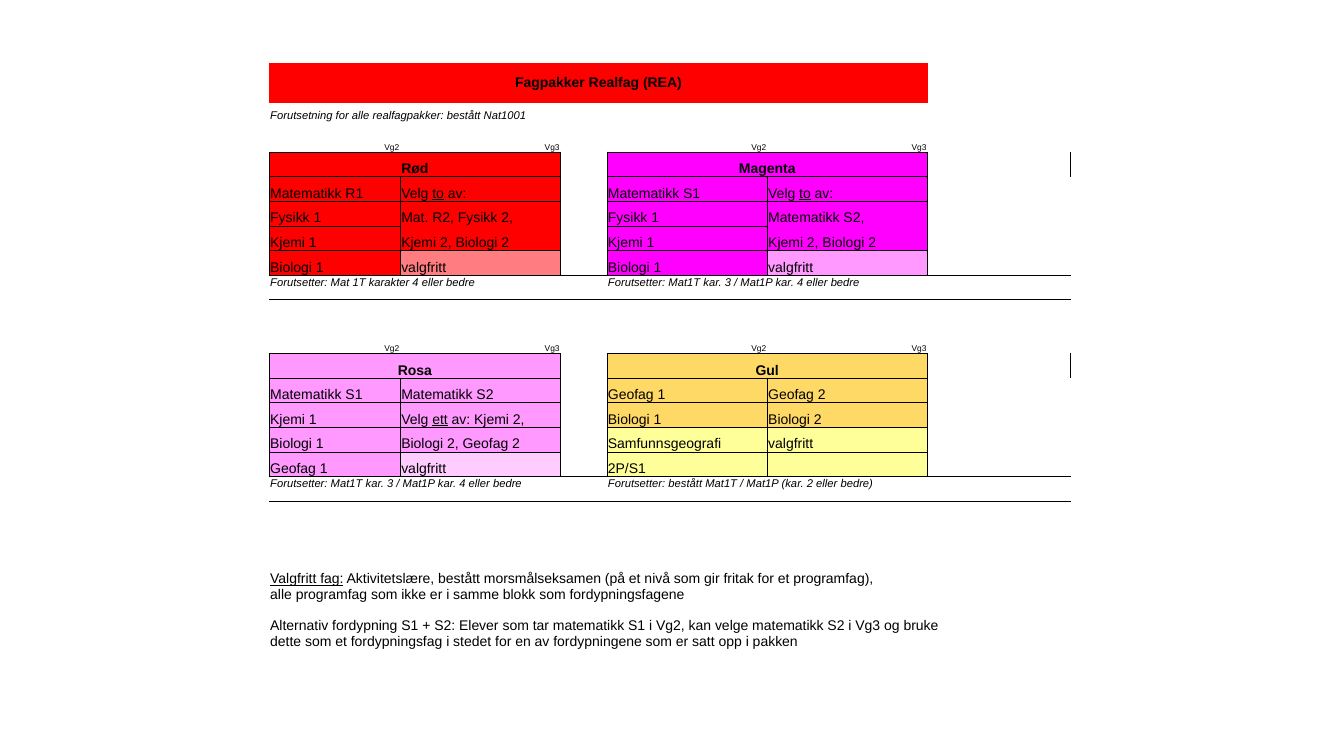
from lxml import etree
from pptx import Presentation
from pptx.dml.color import RGBColor as RGB
from pptx.enum.text import MSO_ANCHOR as ANCHOR, PP_ALIGN as ALIGN
from pptx.oxml.ns import qn
from pptx.util import Inches, Pt

COLORS = {
    "black": "000000", "red": "FF0000", "light red": "FF7C80",
    "magenta": "FF00FF", "pink": "FF99FF", "light pink": "FFCCFF",
    "gold": "FFD966", "yellow": "FFFF99",
}
NO_GRID_STYLE = "{2D5ABB26-0587-4C30-8999-92F81FD0307C}"

# Table grid: one regular row height, with three exceptions
LEFT, TOP, HEIGHT = 2.67, 0.62, 5.82
COLUMNS = [1.3, 1.59, 0.46, 1.59, 1.59, 1.42]
ROW_COUNT = 20
TALL_ROWS = {0: 0.4, 10: 0.29, 19: 0.98}

# Text formats
BODY = {"size": Pt(10)}
BOLD = {"size": Pt(10), "bold": True}
NOTE = {"size": Pt(8), "italic": True}
SMALL = {"size": Pt(6)}

# Neighbouring cell (row step, column step, its touching side) for each side
NEIGHBOURS = {"L": (0, -1, "R"), "R": (0, 1, "L"), "T": (-1, 0, "B"), "B": (1, 0, "T")}

# Each pack: row, column, name, fill, note, then the blocks (lines, fill) per year
PACKS = [
    (2, 0, "Rød", "red", "Forutsetter: Mat 1T karakter 4 eller bedre",
     [(["Matematikk R1"], "red"), (["Fysikk 1"], "red"),
      (["Kjemi 1"], "red"), (["Biologi 1"], "red")],
     [(["Velg _to_ av:", "Mat. R2, Fysikk 2,", "Kjemi 2, Biologi 2"], "red"),
      (["valgfritt"], "light red")]),
    (2, 3, "Magenta", "magenta", "Forutsetter: Mat1T kar. 3 / Mat1P kar. 4 eller bedre",
     [(["Matematikk S1"], "magenta"), (["Fysikk 1"], "magenta"),
      (["Kjemi 1"], "magenta"), (["Biologi 1"], "magenta")],
     [(["Velg _to_ av:", "Matematikk S2,", "Kjemi 2, Biologi 2"], "magenta"),
      (["valgfritt"], "pink")]),
    (10, 0, "Rosa", "pink", "Forutsetter: Mat1T kar. 3 / Mat1P kar. 4 eller bedre",
     [(["Matematikk S1"], "pink"), (["Kjemi 1"], "pink"),
      (["Biologi 1"], "pink"), (["Geofag 1"], "pink")],
     [(["Matematikk S2"], "pink"),
      (["Velg _ett_ av: Kjemi 2,", "Biologi 2, Geofag 2"], "pink"),
      (["valgfritt"], "light pink")]),
    (10, 3, "Gul", "gold", "Forutsetter: bestått Mat1T / Mat1P (kar. 2 eller bedre)",
     [(["Geofag 1"], "gold"), (["Biologi 1"], "gold"),
      (["Samfunnsgeografi"], "yellow"), (["2P/S1"], "yellow")],
     [(["Geofag 2"], "gold"), (["Biologi 2"], "gold"),
      (["valgfritt"], "yellow"), ([""], "yellow")]),
]

FOOTNOTES = [
    "_Valgfritt fag:_ Aktivitetslære, bestått morsmålseksamen "
    "(på et nivå som gir fritak for et programfag),",
    "alle programfag som ikke er i samme blokk som fordypningsfagene",
    "Alternativ fordypning S1 + S2: Elever som tar matematikk S1 i Vg2, "
    "kan velge matematikk S2 i Vg3 og bruke",
    "dette som et fordypningsfag i stedet for en av fordypningene som er satt opp i pakken",
]


def write(p, text, style, align=ALIGN.LEFT):
    """Fill a paragraph; words between underscores are underlined."""
    p.alignment = align
    for i, part in enumerate(text.split("_")):
        if part:
            r = p.add_run()
            r.text = part
            look = {"name": "Arial", "underline": i % 2 == 1, **style}
            for name, value in look.items():
                setattr(r.font, name, value)
            r.font.color.rgb = RGB.from_string(COLORS["black"])


def fill_cell(cell, text, style, align=ALIGN.LEFT, anchor=ANCHOR.BOTTOM, fill=None):
    cell.vertical_anchor = anchor
    write(cell.text_frame.paragraphs[0], text, style, align)
    if fill:
        cell.fill.solid()
        cell.fill.fore_color.rgb = RGB.from_string(COLORS[fill])


def add_grid(s):
    """Add the plain table with its row heights, margins and small empty cells."""
    regular = (HEIGHT - sum(TALL_ROWS.values())) / (ROW_COUNT - len(TALL_ROWS))
    frame = s.shapes.add_table(ROW_COUNT, len(COLUMNS), Inches(LEFT), Inches(TOP),
                               Inches(sum(COLUMNS)), Inches(HEIGHT))
    table = frame.table
    table.first_row = table.horz_banding = False
    frame._element.find(".//" + qn("a:tableStyleId")).text = NO_GRID_STYLE
    for column, width in zip(table.columns, COLUMNS):
        column.width = Inches(width)
    for i, row in enumerate(table.rows):
        row.height = Inches(TALL_ROWS.get(i, regular))
    margins = {"margin_left": 0.01, "margin_right": 0.01, "margin_top": 0.01, "margin_bottom": 0}
    for cell in table.iter_cells():
        for name, value in margins.items():
            setattr(cell, name, Inches(value))
        cell.fill.background()
        cell.text_frame.paragraphs[0]._p.get_or_add_endParaRPr().set("sz", "600")
    return table


def add_span(table, row, first, last, *args, **formats):
    table.cell(row, first).merge(table.cell(row, last))
    fill_cell(table.cell(row, first), *args, **formats)


def mark_edges(edges, row, col, sides):
    """Note the sides of a cell to be ruled, from both cells that share them."""
    for side in sides:
        edges.add((row, col, side))
        down, across, opposite = NEIGHBOURS[side]
        if col + across >= 0:
            edges.add((row + down, col + across, opposite))


def add_pack(table, edges, row, col, name, fill, note, *years):
    # Year labels, heading and note
    for i, year in enumerate(("Vg2", "Vg3")):
        fill_cell(table.cell(row, col + i), year, SMALL, ALIGN.RIGHT)
        mark_edges(edges, row + 1, col + i, "LRTB")
    add_span(table, row + 1, col, col + 1, name, BOLD, ALIGN.CENTER, fill=fill)
    add_span(table, row + 6, col, col + 2, note, NOTE, anchor=ANCHOR.TOP)
    # Subjects, with rules only around each block
    for i, blocks in enumerate(years):
        r = row + 2
        for lines, shade in blocks:
            for n, line in enumerate(lines):
                fill_cell(table.cell(r, col + i), line, BODY, fill=shade)
                sides = "LR" + "T" * (n == 0) + "B" * (n == len(lines) - 1)
                mark_edges(edges, r, col + i, sides)
                r += 1


def draw_edges(table, edges):
    for row, col in {edge[:2] for edge in edges}:
        tcPr = table.cell(row, col)._tc.get_or_add_tcPr()
        sides = [side for side in "LRTB" if (row, col, side) in edges]
        for i, side in enumerate(sides):
            line = etree.Element(qn("a:ln" + side), w=str(Pt(0.5)))
            solid = etree.SubElement(line, qn("a:solidFill"))
            etree.SubElement(solid, qn("a:srgbClr"), val=COLORS["black"])
            tcPr.insert(i, line)


def add_footnotes(table):
    row = ROW_COUNT - 1
    add_span(table, row, 0, len(COLUMNS) - 1, FOOTNOTES[0], BODY)
    tf = table.cell(row, 0).text_frame
    for text in FOOTNOTES[1:]:
        write(tf.add_paragraph(), text, BODY)
    tf.paragraphs[2].space_before = Pt(11)


def main():
    prs = Presentation()
    prs.slide_width, prs.slide_height = Inches(13.33), Inches(7.5)
    s = prs.slides.add_slide(prs.slide_layouts[6])
    table = add_grid(s)

    # Title and general condition
    add_span(table, 0, 0, 4, "Fagpakker Realfag (REA)", BOLD, ALIGN.CENTER,
             ANCHOR.MIDDLE, "red")
    add_span(table, 1, 0, 2, "Forutsetning for alle realfagpakker: bestått Nat1001",
             NOTE, anchor=ANCHOR.MIDDLE)

    # Subject packs
    edges = set()
    for pack in PACKS:
        add_pack(table, edges, *pack)
    draw_edges(table, edges)

    add_footnotes(table)
    prs.save("out.pptx")


if __name__ == "__main__":
    main()
